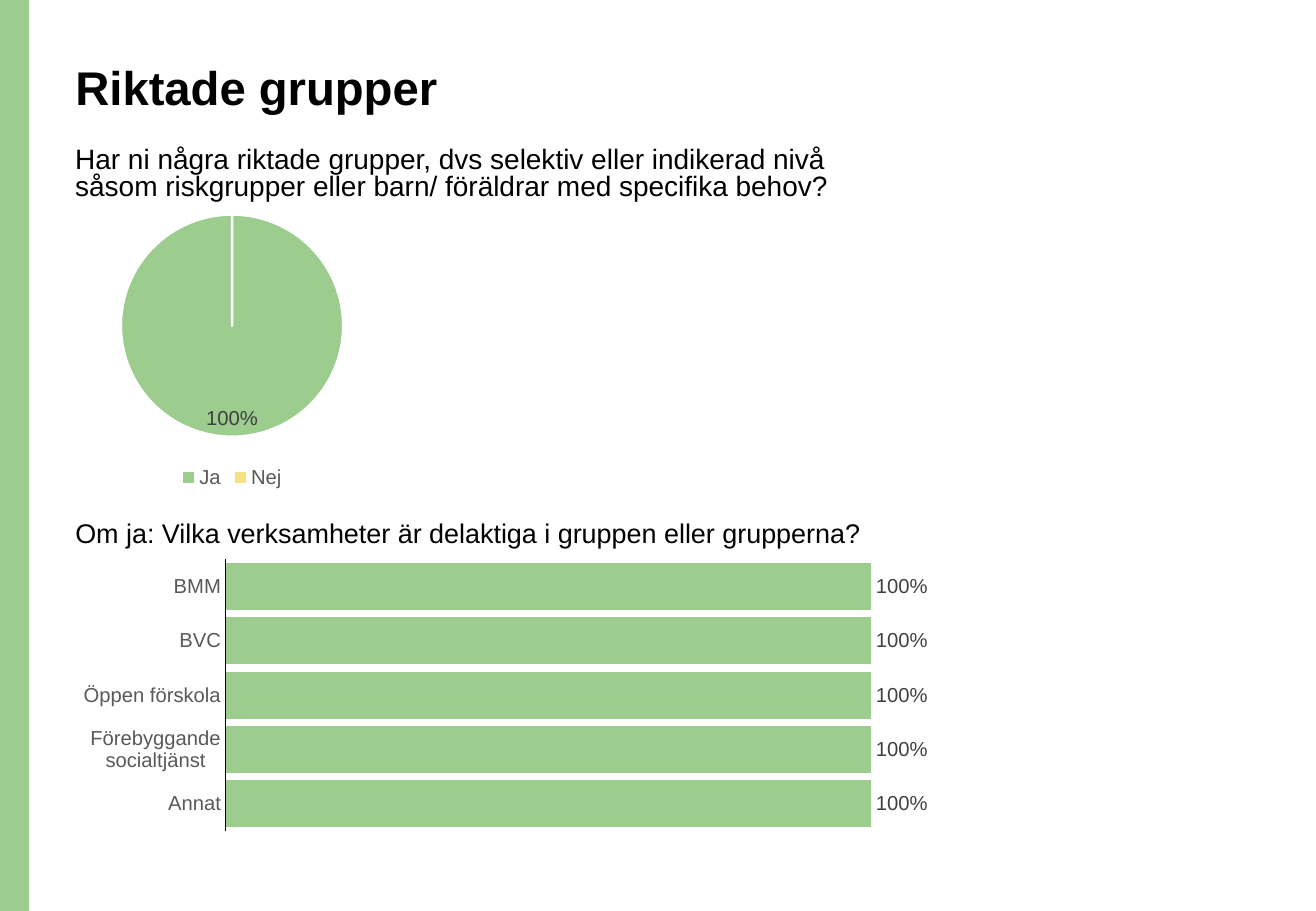
"""Build the slide on targeted groups with a pie chart and a bar chart."""
from lxml import etree
from pptx import Presentation
from pptx.chart.data import CategoryChartData
from pptx.dml.color import RGBColor
from pptx.enum import chart as kinds, shapes, text
from pptx.oxml.ns import qn
from pptx.util import Inches, Pt

GREEN = RGBColor(0x9D, 0xCC, 0x8F)
YELLOW = RGBColor(0xF6, 0xE1, 0x83)
BLACK = RGBColor(0, 0, 0)
WHITE = RGBColor(0xFF, 0xFF, 0xFF)
LABEL_GRAY = RGBColor(0x40, 0x40, 0x40)
AXIS_GRAY = RGBColor(0x59, 0x59, 0x59)
FONT = "Arial"
LEFT = Inches(0.52)


def style_font(font, size, color, bold=False):
    font.name, font.size, font.bold = FONT, Pt(size), bold
    font.color.rgb = color


def add_percent_chart(kind, area, categories, values, number_format, plot_area):
    data = CategoryChartData(number_format="0%")
    data.categories = categories
    data.add_series("Series 1", values)
    chart = page.shapes.add_chart(kind, *area, data).chart
    chart.has_title = False
    style_font(chart.font, 10, BLACK)

    plot = chart.plots[0]
    plot.has_data_labels = True
    labels = plot.data_labels
    labels.show_value = True
    labels.show_percentage = False
    labels.number_format = number_format
    labels.number_format_is_linked = False
    style_font(labels.font, 12, LABEL_GRAY)

    plot_element = chart.element.find(".//" + qn("c:plotArea"))
    for old_layout in plot_element.findall(qn("c:layout")):
        plot_element.remove(old_layout)
    layout = etree.Element(qn("c:layout"))
    manual = etree.SubElement(layout, qn("c:manualLayout"))
    settings = [("layoutTarget", "inner"), ("xMode", "edge"), ("yMode", "edge")]
    for name, value in settings + list(zip("xywh", plot_area)):
        etree.SubElement(manual, qn("c:" + name)).set("val", str(value))
    plot_element.insert(0, layout)
    return chart


deck = Presentation()
deck.slide_width, deck.slide_height = Inches(10.83), Inches(7.5)
page = deck.slides.add_slide(deck.slide_layouts[1])

band = page.shapes.add_shape(
    shapes.MSO_SHAPE.RECTANGLE, 0, 0, Inches(0.24), deck.slide_height)
band.shadow.inherit = False
band.fill.solid()
band.fill.fore_color.rgb = GREEN
band.line.fill.background()

title = page.shapes.title
follow_up = page.placeholders[1]
question = page.shapes.add_textbox(0, 0, 0, 0)
text_rows = [
    (title, 0.48, 9.34, 1.02, "Riktade grupper", 28, True, 0.9),
    (question, 1.17, 6.91, 0.57,
     "Har ni några riktade grupper, dvs selektiv eller indikerad nivå "
     "såsom riskgrupper eller barn/ föräldrar med specifika behov?", 16.6, False, 0.8),
    (follow_up, 4.23, 8.13, 0.63,
     "Om ja: Vilka verksamheter är delaktiga i gruppen eller grupperna?", 16, False, 0.9),
]
for box, top, width, height, words, size, bold, spacing in text_rows:
    box.left, box.top = LEFT, Inches(top)
    box.width, box.height = Inches(width), Inches(height)
    frame = box.text_frame
    frame.word_wrap = True
    frame.auto_size = text.MSO_AUTO_SIZE.NONE
    frame.vertical_anchor = text.MSO_ANCHOR.TOP
    para = frame.paragraphs[0]
    para.alignment = text.PP_ALIGN.LEFT
    para.line_spacing = spacing
    para.space_before = Pt(0)
    properties = para._p.get_or_add_pPr()
    properties.set("marL", "0")
    properties.set("indent", "0")
    etree.SubElement(properties, qn("a:buNone"))
    span = para.add_run()
    span.text = words
    style_font(span.font, size, BLACK, bold)

pie = add_percent_chart(
    kinds.XL_CHART_TYPE.PIE,
    (LEFT, Inches(1.62), Inches(2.78), Inches(2.44)),
    ["Ja", "Nej"], [1, 0], "0%;;", (0.17, 0.06, 0.66, 0.75))
pie.plots[0].data_labels.position = kinds.XL_LABEL_POSITION.INSIDE_END
for index, color in enumerate([GREEN, YELLOW]):
    slice_format = pie.series[0].points[index].format
    slice_format.fill.solid()
    slice_format.fill.fore_color.rgb = color
    slice_format.line.color.rgb = WHITE
    slice_format.line.width = Pt(1.5)
pie.has_legend = True
pie.legend.position = kinds.XL_LEGEND_POSITION.BOTTOM
pie.legend.include_in_layout = False
style_font(pie.legend.font, 12, AXIS_GRAY)

bars = add_percent_chart(
    kinds.XL_CHART_TYPE.BAR_CLUSTERED,
    (LEFT, Inches(4.56), Inches(7.87), Inches(2.33)),
    ["BMM", "BVC", "Öppen förskola", "Förebyggande socialtjänst", "Annat"],
    [1] * 5, "0%", (0.17, 0.02, 0.81, 0.96))
bars.has_legend = False
bar_plot = bars.plots[0]
bar_plot.gap_width = 15
bar_plot.vary_by_categories = False
bar_plot.data_labels.position = kinds.XL_LABEL_POSITION.OUTSIDE_END
bar_fill = bars.series[0].format.fill
bar_fill.solid()
bar_fill.fore_color.rgb = GREEN

category_axis = bars.category_axis
category_axis.reverse_order = True
category_axis.major_tick_mark = kinds.XL_TICK_MARK.NONE
category_axis.minor_tick_mark = kinds.XL_TICK_MARK.NONE
category_axis.format.line.color.rgb = BLACK
category_axis.format.line.width = Pt(0.75)
style_font(category_axis.tick_labels.font, 12, AXIS_GRAY)

value_axis = bars.value_axis
value_axis.minimum_scale, value_axis.maximum_scale = 0, 1.2
value_axis.has_major_gridlines = False
value_axis.visible = False

deck.save("out.pptx")
